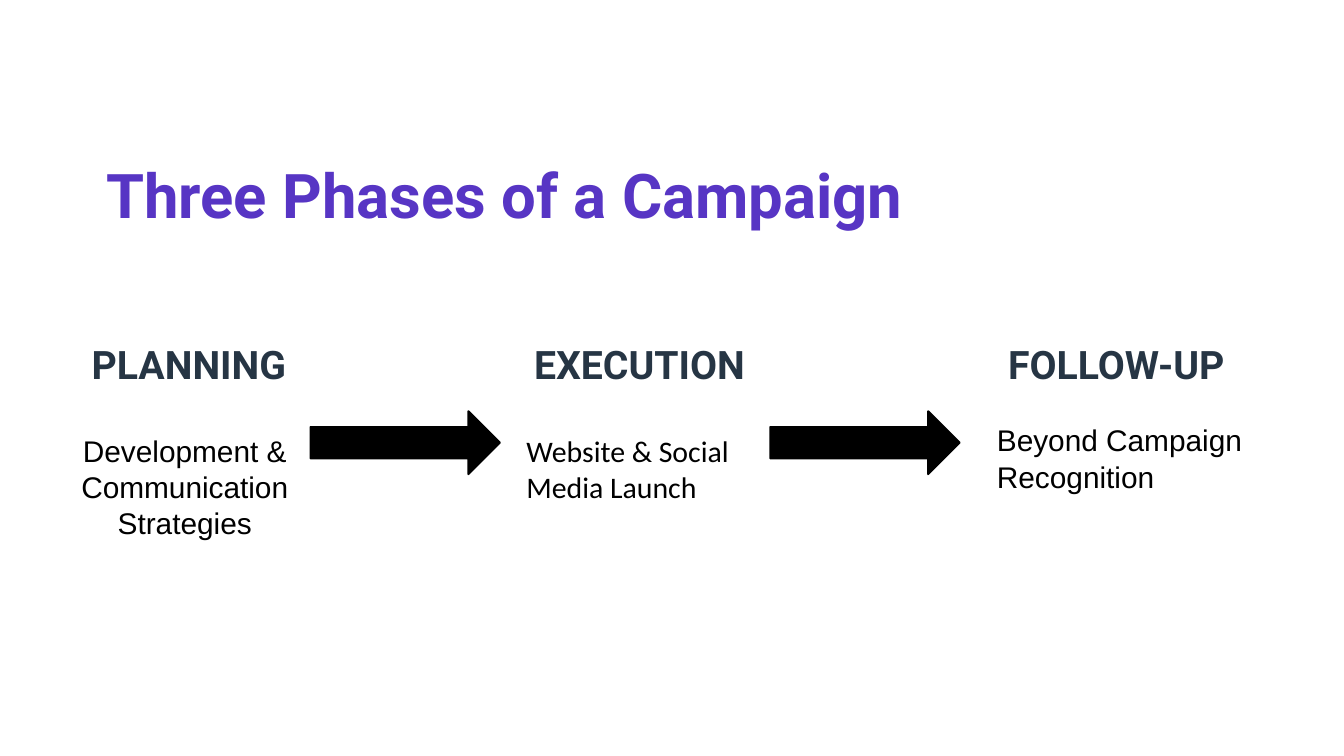
import pptx
import pptx.util
from pptx.dml.color import RGBColor
from pptx.enum.shapes import MSO_SHAPE
from pptx.enum.text import MSO_ANCHOR, PP_ALIGN

Pt = pptx.util.Pt

PURPLE = RGBColor(0x57, 0x35, 0xC4)
NAVY = RGBColor(0x26, 0x35, 0x44)
BLACK = RGBColor(0, 0, 0)

TITLE = "Three Phases of a Campaign"
# heading, heading left, detail lines, detail box (left, top, width, height), font, alignment
PHASES = [
    ("PLANNING", 42, ["Development &", "Communication Strategies"],
     (29.5, 228.2, 139, 65.5), "Arial", PP_ALIGN.CENTER),
    ("EXECUTION", 279, ["Website & Social Media Launch"],
     (275, 228.2, 162.7, 67.7), "Calibri", PP_ALIGN.LEFT),
    ("FOLLOW-UP", 533, ["Beyond Campaign", "Recognition"],
     (527, 222.5, 150.5, 46), "Arial", PP_ALIGN.LEFT),
]
HEADING_TOP, HEADING_WIDTH, HEADING_HEIGHT = 181.4, 150, 30
ARROW_LEFTS = [166.3, 412.6]
ARROW_TOP, ARROW_WIDTH, ARROW_HEIGHT = 220.3, 101.5, 33.8


def write(tf, lines, font, size, color, bold=False, align=PP_ALIGN.LEFT, spacing=0.9):
    tf.word_wrap = True
    for i, line in enumerate(lines):
        p = tf.paragraphs[0] if i == 0 else tf.add_paragraph()
        p.text = line
        p.alignment = align
        p.line_spacing = spacing
        p.font.name = font
        p.font.size = Pt(size)
        p.font.bold = bold
        p.font.color.rgb = color


def add_text(s, box, *args, **kwargs):
    write(s.shapes.add_textbox(*map(Pt, box)).text_frame, *args, **kwargs)


prs = pptx.Presentation()
prs.slide_width, prs.slide_height = Pt(720), Pt(405)
s = prs.slides.add_slide(prs.slide_layouts[5])

title = s.shapes.title
title.left, title.top, title.width, title.height = map(Pt, (49.7, 85, 620.6, 42.5))
title.text_frame.vertical_anchor = MSO_ANCHOR.MIDDLE
write(title.text_frame, [TITLE], "Roboto", 33, PURPLE, bold=True)

for heading, left, lines, box, font, align in PHASES:
    add_text(s, (left, HEADING_TOP, HEADING_WIDTH, HEADING_HEIGHT),
             [heading], "Roboto", 21, NAVY, bold=True)
    add_text(s, box, lines, font, 16, BLACK, align=align, spacing=Pt(19.3))

for left in ARROW_LEFTS:
    arrow = s.shapes.add_shape(MSO_SHAPE.RIGHT_ARROW, Pt(left), Pt(ARROW_TOP),
                               Pt(ARROW_WIDTH), Pt(ARROW_HEIGHT))
    arrow.shadow.inherit = False
    arrow.fill.solid()
    arrow.fill.fore_color.rgb = BLACK
    arrow.line.color.rgb = BLACK
    arrow.line.width = Pt(1)

prs.save("out.pptx")
